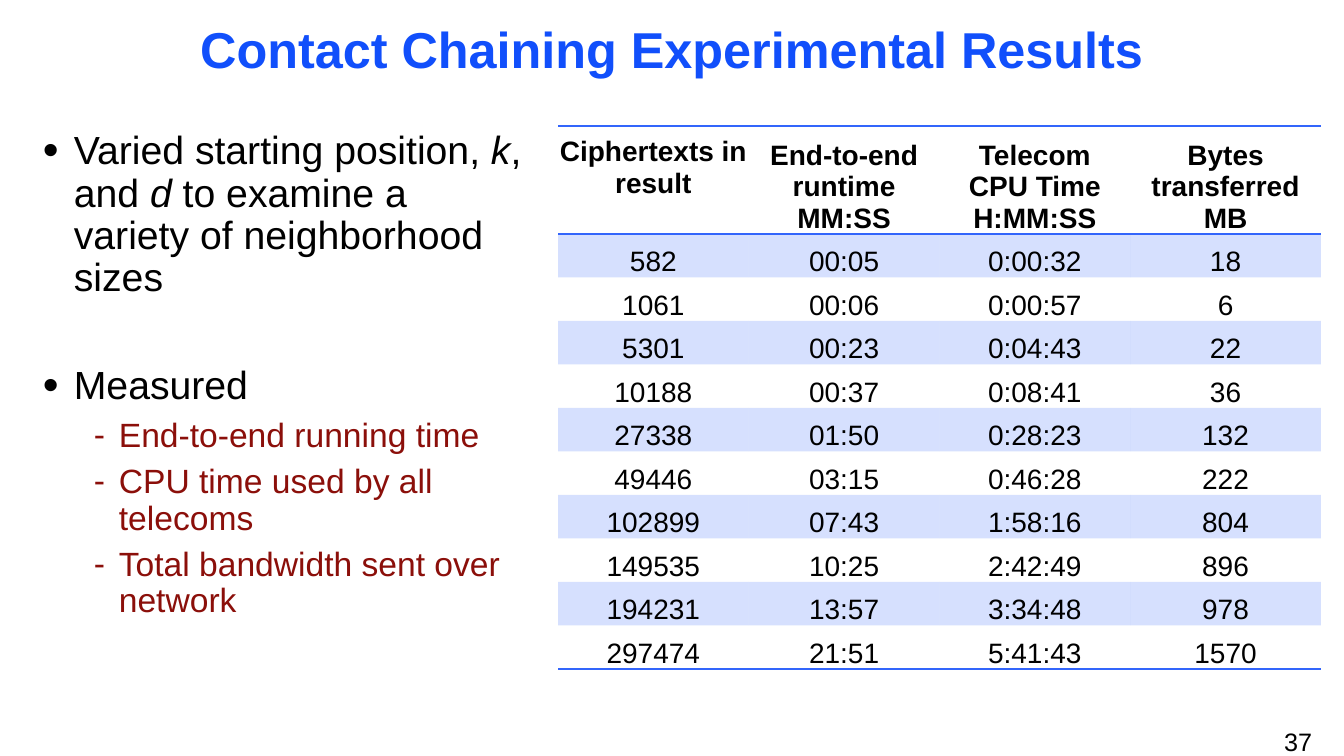
from lxml.etree import SubElement
from pptx import Presentation
from pptx.dml.color import RGBColor
from pptx.enum.text import MSO_ANCHOR, PP_ALIGN
from pptx.oxml.ns import qn
from pptx.util import Pt

LEFT, CENTER, RIGHT = PP_ALIGN.LEFT, PP_ALIGN.CENTER, PP_ALIGN.RIGHT
BOTTOM = MSO_ANCHOR.BOTTOM
NO_GRID = "{2D5ABB26-0587-4C30-8999-92F81FD0307C}"

THEME = {
    "font": "Arial",
    "title": (36, "114FFB"),
    "main": (28, "000000"),
    "sub": (24, "8B0F0A"),
    "cell": (20, "000000"),
    "page": (18, "000000"),
    "rule": "3365FB",
}


def px(n):
    return round(n * 914400 / 100.8)


def write(par, text, style, align=LEFT, bold=False, italic=False):
    par.alignment = align
    run = par.add_run()
    run.text = text
    size, color = THEME[style]
    font = run.font
    font.name, font.size = THEME["font"], Pt(size)
    font.bold, font.italic = bold, italic
    font.color.rgb = RGBColor.from_string(color)


deck = Presentation()
deck.slide_width, deck.slide_height = px(1344), px(756)
slide = deck.slides.add_slide(deck.slide_layouts[5])

# Title
title = slide.shapes.title
title.left, title.top, title.width, title.height = px(0), px(17), px(1344), px(68)
frame = title.text_frame
frame.vertical_anchor = BOTTOM
frame.paragraphs[0].line_spacing = 0.9
write(frame.paragraphs[0], "Contact Chaining Experimental Results", "title",
      CENTER, bold=True)

# Bullets: style, space before in points, runs of (text, italic)
POINTS = [
    ("main", 8.4, [("Varied starting position, ", False), ("k", True),
                   (", and ", False), ("d", True),
                   (" to examine a variety of neighborhood sizes", False)]),
    ("main", 47, [("Measured", False)]),
    ("sub", 7.2, [("End-to-end running time", False)]),
    ("sub", 7.2, [("CPU time used by all telecoms", False)]),
    ("sub", 7.2, [("Total bandwidth sent over network", False)]),
]
# Bullet sign, left indent, hang, size in percent
MARKS = {"main": ("•", 31, 31, 115), "sub": ("-", 76, 25, 100)}

body = slide.shapes.add_textbox(px(33), px(126), px(499), px(604)).text_frame
body.word_wrap = True
for i, (style, gap, runs) in enumerate(POINTS):
    par = body.add_paragraph() if i else body.paragraphs[0]
    par.level = 1 if style == "sub" else 0
    par.line_spacing, par.space_before = 0.9, Pt(gap)
    for text, italic in runs:
        write(par, text, style, italic=italic)
    sign, indent, hang, scale = MARKS[style]
    props = par._p.get_or_add_pPr()
    props.set("marL", str(px(indent)))
    props.set("indent", str(-px(hang)))
    tint = SubElement(props, qn("a:buClr"))
    SubElement(tint, qn("a:srgbClr"), val=THEME[style][1])
    SubElement(props, qn("a:buSzPct"), val=str(scale * 1000))
    SubElement(props, qn("a:buFont"), typeface=THEME["font"])
    SubElement(props, qn("a:buChar"), char=sign)

# Table of results
HEADS = [
    ["Ciphertexts in result"],
    ["End-to-end runtime", "MM:SS"],
    ["Telecom", "CPU Time", "H:MM:SS"],
    ["Bytes transferred", "MB"],
]
RESULTS = [
    ("582", "00:05", "0:00:32", "18"),
    ("1061", "00:06", "0:00:57", "6"),
    ("5301", "00:23", "0:04:43", "22"),
    ("10188", "00:37", "0:08:41", "36"),
    ("27338", "01:50", "0:28:23", "132"),
    ("49446", "03:15", "0:46:28", "222"),
    ("102899", "07:43", "1:58:16", "804"),
    ("149535", "10:25", "2:42:49", "896"),
    ("194231", "13:57", "3:34:48", "978"),
    ("297474", "21:51", "5:41:43", "1570"),
]
WIDE, HIGH, HEAD = 763, 543, 108
rows = [HEADS] + [[[value] for value in row] for row in RESULTS]
last = len(RESULTS)
table = slide.shapes.add_table(len(rows), len(HEADS), px(558), px(126),
                               px(WIDE), px(HIGH)).table
table.horz_banding = False
table._tbl.tblPr.find(qn("a:tableStyleId")).text = NO_GRID
for col in table.columns:
    col.width = px(WIDE / len(HEADS))

for r, row in enumerate(rows):
    table.rows[r].height = px((HIGH - HEAD) / last) if r else px(HEAD)
    edges = {0: ["a:lnT", "a:lnB"], last: ["a:lnB"]}.get(r, [])
    for c, lines in enumerate(row):
        cell = table.cell(r, c)
        cell.vertical_anchor = BOTTOM
        cell.margin_left = cell.margin_right = cell.margin_top = px(1)
        # The first heading sits one line above the others
        cell.margin_bottom = px(35) if r == c == 0 else 0
        for i, text in enumerate(lines):
            frame = cell.text_frame
            par = frame.add_paragraph() if i else frame.paragraphs[0]
            write(par, text, "cell", CENTER, bold=r == 0)
        props = cell._tc.get_or_add_tcPr()
        for edge in edges:
            line = SubElement(props, qn(edge), w=str(Pt(1)))
            paint = SubElement(line, qn("a:solidFill"))
            SubElement(paint, qn("a:srgbClr"), val=THEME["rule"])
        if r % 2:
            cell.fill.solid()
            cell.fill.fore_color.rgb = RGBColor.from_string(THEME["rule"])
            color = props.find(qn("a:solidFill")).find(qn("a:srgbClr"))
            SubElement(color, qn("a:alpha"), val="20000")
        else:
            cell.fill.background()

# Page number
page = slide.shapes.add_textbox(px(1221), px(721), px(101), px(40)).text_frame
page.word_wrap = True
write(page.paragraphs[0], "37", "page", RIGHT)

deck.save("out.pptx")
